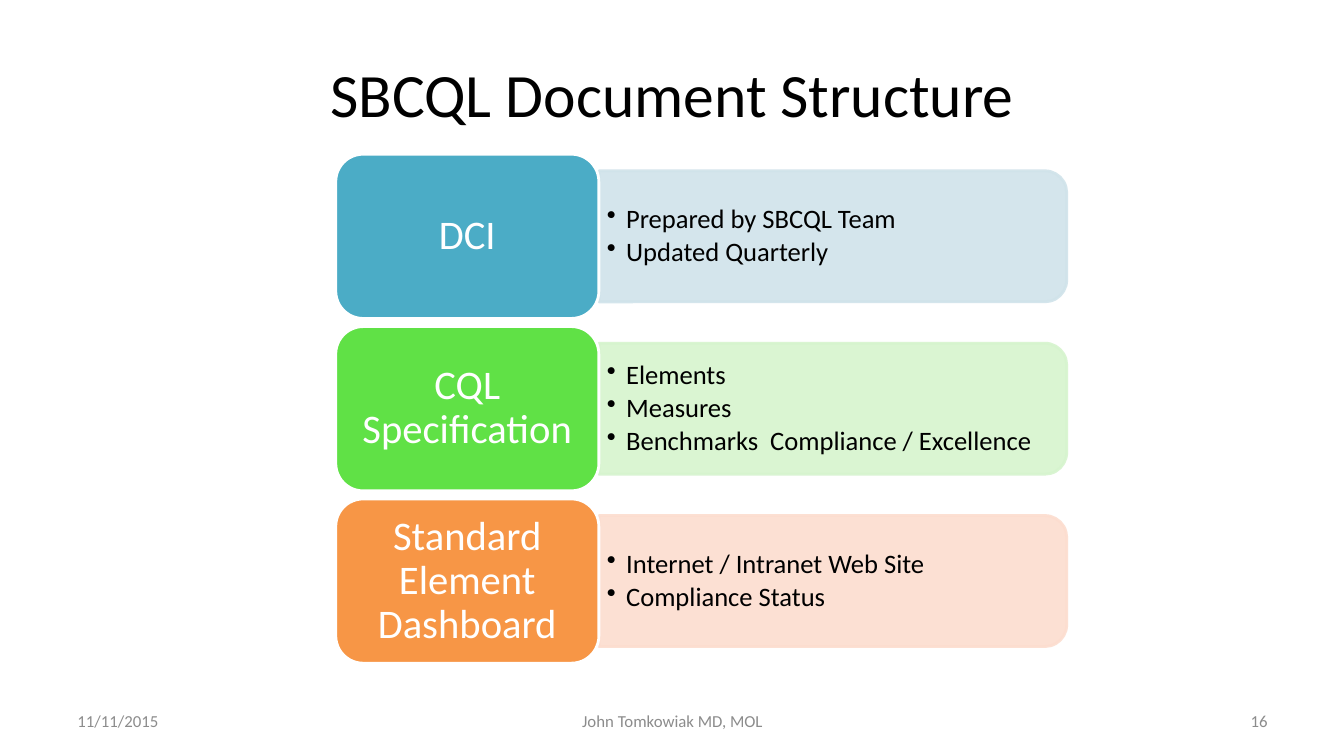
from dataclasses import dataclass

from lxml.etree import SubElement
from pptx import Presentation
from pptx.dml.color import RGBColor
from pptx.enum.shapes import MSO_SHAPE
from pptx.enum.text import MSO_ANCHOR, PP_ALIGN
from pptx.oxml.ns import qn
from pptx.util import Inches, Pt

# Content
TITLE = "SBCQL Document Structure"
SECTIONS = [
    {"label": "DCI", "color": "4BACC6", "tint": "D0E3EA",
     "points": ["Prepared by SBCQL Team", "Updated Quarterly"]},
    {"label": "CQL Specification", "color": "60E146", "tint": "D6F4CE",
     "points": ["Elements", "Measures", "Benchmarks  Compliance / Excellence"]},
    {"label": "Standard Element Dashboard", "color": "F79646", "tint": "FCDDCF",
     "points": ["Internet / Intranet Web Site", "Compliance Status"]},
]
FOOTERS = [  # text, left, width, alignment
    ("11/11/2015", 0.67, 3.11, PP_ALIGN.LEFT),
    ("John Tomkowiak MD, MOL", 4.56, 4.22, PP_ALIGN.CENTER),
    ("16", 9.56, 3.11, PP_ALIGN.RIGHT),
]


@dataclass(frozen=True)
class Theme:
    font: str = "Calibri"
    text: str = "000000"
    light: str = "FFFFFF"
    muted: str = "8C8C8C"
    title_size: int = 44
    label_size: int = 29
    point_size: int = 19
    footer_size: int = 12
    line_width: int = 2
    band_alpha: int = 90


THEME = Theme()

# Layout in inches
LABEL_LEFT, LABEL_TOP, LABEL_WIDTH, LABEL_HEIGHT = 3.33, 1.53, 2.61, 1.63
ROW_STEP = 1.71
BAND_LENGTH, BAND_HEIGHT = 4.64, 1.3
POINTS_WIDTH, POINTS_HEIGHT = 4.58, 1.18
POINT_INDENT = 0.19


def set_frame(frame, horizontal, vertical):
    frame.word_wrap = True
    frame.vertical_anchor = MSO_ANCHOR.MIDDLE
    frame.margin_left = frame.margin_right = Inches(horizontal)
    frame.margin_top = frame.margin_bottom = Inches(vertical)


def add_run(paragraph, text, size, color, alignment):
    paragraph.alignment = alignment
    run = paragraph.add_run()
    run.text = text
    run.font.name = THEME.font
    run.font.size = Pt(size)
    run.font.color.rgb = RGBColor.from_string(color)


def add_block(slide, kind, box, fill, line):
    shape = slide.shapes.add_shape(kind, *map(Inches, box))
    shape.shadow.inherit = False
    shape.fill.solid()
    shape.fill.fore_color.rgb = RGBColor.from_string(fill)
    shape.line.color.rgb = RGBColor.from_string(line)
    shape.line.width = Pt(THEME.line_width)
    return shape


def add_bullet(paragraph):
    properties = paragraph._p.get_or_add_pPr()
    properties.set("marL", str(Inches(POINT_INDENT)))
    properties.set("indent", str(-Inches(POINT_INDENT)))
    SubElement(properties, qn("a:buChar")).set("char", "•")


def add_section(slide, section, top):
    middle = top + LABEL_HEIGHT / 2
    band_left = LABEL_LEFT + LABEL_WIDTH

    # Tinted band, turned so that its rounded end faces right
    band_box = (band_left + (BAND_LENGTH - BAND_HEIGHT) / 2,
                middle - BAND_LENGTH / 2, BAND_HEIGHT, BAND_LENGTH)
    band = add_block(slide, MSO_SHAPE.ROUND_2_SAME_RECTANGLE, band_box,
                     section["tint"], section["tint"])
    band.rotation = 90
    for color in band._element.spPr.iter(qn("a:srgbClr")):
        SubElement(color, qn("a:alpha")).set("val", str(THEME.band_alpha * 1000))

    # Bulleted points
    points_box = (band_left, middle - POINTS_HEIGHT / 2, POINTS_WIDTH, POINTS_HEIGHT)
    frame = slide.shapes.add_textbox(*map(Inches, points_box)).text_frame
    set_frame(frame, 0.08, 0.04)
    for index, point in enumerate(section["points"]):
        paragraph = frame.add_paragraph() if index else frame.paragraphs[0]
        paragraph.line_spacing = 0.9
        paragraph.space_after = Pt(THEME.point_size * 0.15)
        add_bullet(paragraph)
        add_run(paragraph, point, THEME.point_size, THEME.text, PP_ALIGN.LEFT)

    # Coloured label
    label_box = (LABEL_LEFT, top, LABEL_WIDTH, LABEL_HEIGHT)
    label = add_block(slide, MSO_SHAPE.ROUNDED_RECTANGLE, label_box,
                      section["color"], THEME.light)
    set_frame(label.text_frame, 0.12, 0.06)
    paragraph = label.text_frame.paragraphs[0]
    paragraph.line_spacing = 0.9
    add_run(paragraph, section["label"], THEME.label_size, THEME.light, PP_ALIGN.CENTER)


def main():
    presentation = Presentation()
    presentation.slide_width = Inches(13.33)
    presentation.slide_height = Inches(7.5)
    slide = presentation.slides.add_slide(presentation.slide_layouts[5])

    # Title
    title = slide.shapes.title
    title.left, title.top, title.width, title.height = map(Inches, (0.67, 0.3, 12, 1.25))
    set_frame(title.text_frame, 0.1, 0.05)
    add_run(title.text_frame.paragraphs[0], TITLE, THEME.title_size, THEME.text,
            PP_ALIGN.CENTER)

    # Sections
    for row, section in enumerate(SECTIONS):
        add_section(slide, section, LABEL_TOP + row * ROW_STEP)

    # Footer
    for text, left, width, alignment in FOOTERS:
        footer_box = (left, 6.95, width, 0.4)
        frame = slide.shapes.add_textbox(*map(Inches, footer_box)).text_frame
        set_frame(frame, 0.1, 0.05)
        add_run(frame.paragraphs[0], text, THEME.footer_size, THEME.muted, alignment)

    presentation.save("out.pptx")


if __name__ == "__main__":
    main()
